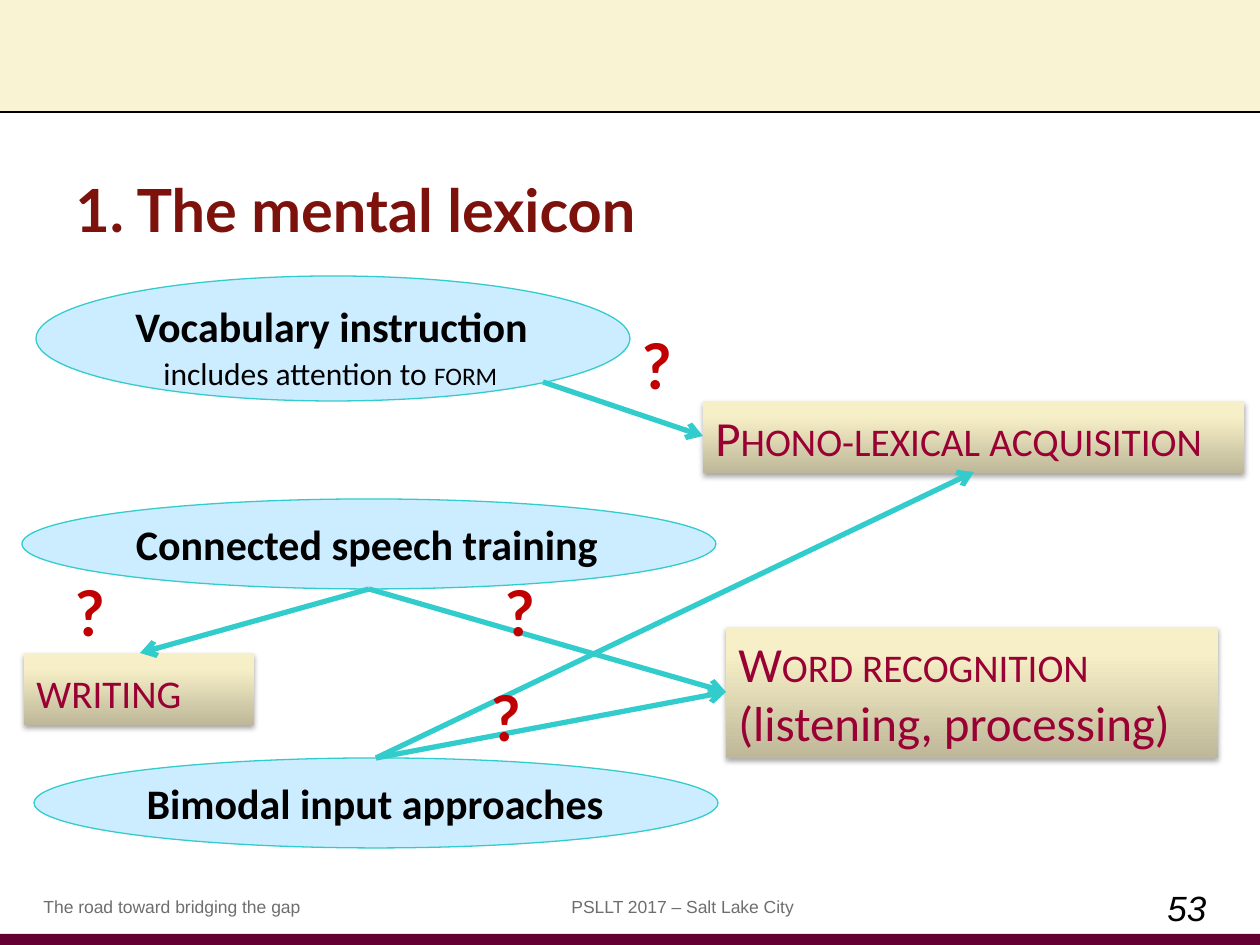
from typing import NamedTuple

import lxml.etree
import pptx
import pptx.dml.color
import pptx.enum.shapes
import pptx.enum.text
import pptx.oxml
import pptx.oxml.ns
import pptx.util

EMU_PER_PX = 914400 / 126
WIDTH, HEIGHT = 1260, 945
DRAWING_NS = 'xmlns:a="http://schemas.openxmlformats.org/drawingml/2006/main"'

CREAM, PLUM, BLACK, GREY = "F9F3D3", "660033", "000000", "6D6E70"
PALE_BLUE, TURQUOISE = "CCECFF", "33CCCC"
BROWN, CRIMSON, RED = "7D110C", "990033", "C00000"
GOLD_STOPS = ((0, "BEB899"), (80, "F7EFC7"), (100, "F9F1C7"))

SHAPES = pptx.enum.shapes.MSO_SHAPE
ANCHORS = pptx.enum.text.MSO_ANCHOR
ALIGNMENTS = pptx.enum.text.PP_ALIGN


class Box(NamedTuple):
    left: int
    top: int
    width: int
    height: int


class Point(NamedTuple):
    x: int
    y: int


class Style(NamedTuple):
    font: str
    size: int
    color: str
    bold: bool = False
    italic: bool = False


class Run(NamedTuple):
    text: str
    small_caps: bool = False


class Label(NamedTuple):
    box: Box
    runs: tuple[Run, ...]
    style: Style
    align: ALIGNMENTS = ALIGNMENTS.LEFT
    anchor: ANCHORS = ANCHORS.TOP


class Link(NamedTuple):
    start: Point
    end: Point


TITLE = Style("Lato", 34, BROWN, bold=True)
METHOD = Style("Calibri", 24, BLACK, bold=True)
DETAIL = Style("Calibri", 18, BLACK)
OUTCOME = Style("Calibri", 28, CRIMSON)
QUESTION = Style("Lato", 36, RED, bold=True)
FOOTER = Style("Arial", 10, GREY)
NUMBER = Style("Arial", 20, BLACK, italic=True)

PLAIN_LABELS = (
    Label(Box(1155, 880, 73, 55), (Run("53"),), NUMBER),
    Label(Box(31, 890, 400, 34), (Run("The road toward bridging the gap"),), FOOTER),
    Label(Box(441, 890, 483, 34), (Run("PSLLT 2017 – Salt Lake City"),), FOOTER,
          align=ALIGNMENTS.CENTER),
    Label(Box(63, 130, 1126, 157), (Run("1. The mental lexicon"),), TITLE,
          anchor=ANCHORS.MIDDLE),
)
METHODS = (
    Label(Box(36, 276, 594, 125), (Run("Vocabulary instruction"),), METHOD),
    Label(Box(22, 499, 694, 90), (Run("Connected speech training"),), METHOD),
    Label(Box(34, 758, 684, 90), (Run("Bimodal input approaches"),), METHOD),
)
ATTENTION = Label(Box(151, 348, 364, 50),
                  (Run("includes attention to "), Run("form", True)), DETAIL)
OUTCOMES = (
    Label(Box(703, 401, 541, 72), (Run("Phono-lexical acquisition", True),), OUTCOME),
    Label(Box(726, 627, 492, 131),
          (Run("Word recognition ", True), Run("(listening, processing)")), OUTCOME),
    Label(Box(24, 653, 230, 72), (Run("writing", True),), OUTCOME),
)
SPEECH_EXIT, BIMODAL_EXIT = Point(369, 589), Point(376, 758)
RECOGNITION_ENTRY = Point(726, 692)
LINKS = (
    Link(Point(543, 382), Point(703, 436)),
    Link(SPEECH_EXIT, RECOGNITION_ENTRY),
    Link(SPEECH_EXIT, Point(140, 653)),
    Link(BIMODAL_EXIT, Point(974, 472)),
    Link(BIMODAL_EXIT, RECOGNITION_ENTRY),
)
QUESTION_CORNERS = (Point(630, 320), Point(493, 567), Point(63, 567), Point(479, 672))


def px(*lengths: int) -> list[int]:
    return [pptx.util.Emu(round(length * EMU_PER_PX)) for length in lengths]


def rgb(color: str) -> pptx.dml.color.RGBColor:
    return pptx.dml.color.RGBColor.from_string(color)


def write(shape, label: Label) -> None:
    frame = shape.text_frame
    frame.word_wrap = True
    frame.vertical_anchor = label.anchor
    paragraph = frame.paragraphs[0]
    paragraph.alignment = label.align
    for part in label.runs:
        run = paragraph.add_run()
        run.text = part.text
        if part.small_caps:
            run._r.get_or_add_rPr().set("cap", "small")
    font, style = paragraph.font, label.style
    font.name, font.size = style.font, pptx.util.Pt(style.size)
    font.bold, font.italic = style.bold, style.italic
    font.color.rgb = rgb(style.color)


def add_label(slide, label: Label) -> None:
    write(slide.shapes.add_textbox(*px(*label.box)), label)


def add_filled(slide, kind: SHAPES, box: Box, color: str):
    shape = slide.shapes.add_shape(kind, *px(*box))
    shape.shadow.inherit = False
    shape.fill.solid()
    shape.fill.fore_color.rgb = rgb(color)
    shape.line.fill.background()
    return shape


def add_method(slide, label: Label) -> None:
    shape = add_filled(slide, SHAPES.OVAL, label.box, PALE_BLUE)
    shape.line.color.rgb = rgb(TURQUOISE)
    shape.line.width = pptx.util.Pt(0.75)
    shape.text_frame.margin_right = 0
    write(shape, label)


def add_outcome(slide, label: Label) -> None:
    """Draw a gold box that darkens downwards and casts a soft shadow."""
    shape = add_filled(slide, SHAPES.RECTANGLE, label.box, GOLD_STOPS[0][1])
    stops = "".join(f'<a:gs pos="{place * 1000}"><a:srgbClr val="{color}"/></a:gs>'
                    for place, color in GOLD_STOPS)
    properties = shape._element.spPr
    solid = properties.find(pptx.oxml.ns.qn("a:solidFill"))
    properties.replace(solid, pptx.oxml.parse_xml(
        f'<a:gradFill {DRAWING_NS} rotWithShape="1"><a:gsLst>{stops}</a:gsLst>'
        '<a:lin ang="16200000" scaled="0"/></a:gradFill>'))
    effects = properties.find(pptx.oxml.ns.qn("a:effectLst"))
    effects.append(pptx.oxml.parse_xml(
        f'<a:outerShdw {DRAWING_NS} blurRad="40000" dist="23000" dir="5400000" '
        'rotWithShape="0"><a:srgbClr val="000000"><a:alpha val="35000"/>'
        '</a:srgbClr></a:outerShdw>'))
    write(shape, label)


def add_line(slide, link: Link, color: str, points: float):
    line = slide.shapes.add_connector(pptx.enum.shapes.MSO_CONNECTOR.STRAIGHT,
                                      *px(*link.start, *link.end))
    line.line.color.rgb = rgb(color)
    line.line.width = pptx.util.Pt(points)
    lxml.etree.SubElement(line._element.spPr, pptx.oxml.ns.qn("a:effectLst"))
    return line


def add_arrow(slide, link: Link) -> None:
    outline = add_line(slide, link, TURQUOISE, 3).line._get_or_add_ln()
    lxml.etree.SubElement(outline, pptx.oxml.ns.qn("a:tailEnd"), type="arrow")


def main() -> None:
    presentation = pptx.Presentation()
    presentation.slide_width, presentation.slide_height = px(WIDTH, HEIGHT)
    slide = presentation.slides.add_slide(presentation.slide_layouts[6])

    add_filled(slide, SHAPES.RECTANGLE, Box(0, 0, WIDTH, 111), CREAM)
    add_line(slide, Link(Point(0, 112), Point(WIDTH, 112)), BLACK, 1)
    add_filled(slide, SHAPES.RECTANGLE, Box(0, 934, WIDTH, 11), PLUM)
    for label in PLAIN_LABELS:
        add_label(slide, label)
    for method in METHODS:
        add_method(slide, method)
    for outcome in OUTCOMES:
        add_outcome(slide, outcome)
    add_label(slide, ATTENTION)
    for link in LINKS:
        add_arrow(slide, link)
    for corner in QUESTION_CORNERS:
        add_label(slide, Label(Box(*corner, 52, 89), (Run("?"),), QUESTION))

    presentation.save("out.pptx")


if __name__ == "__main__":
    main()
